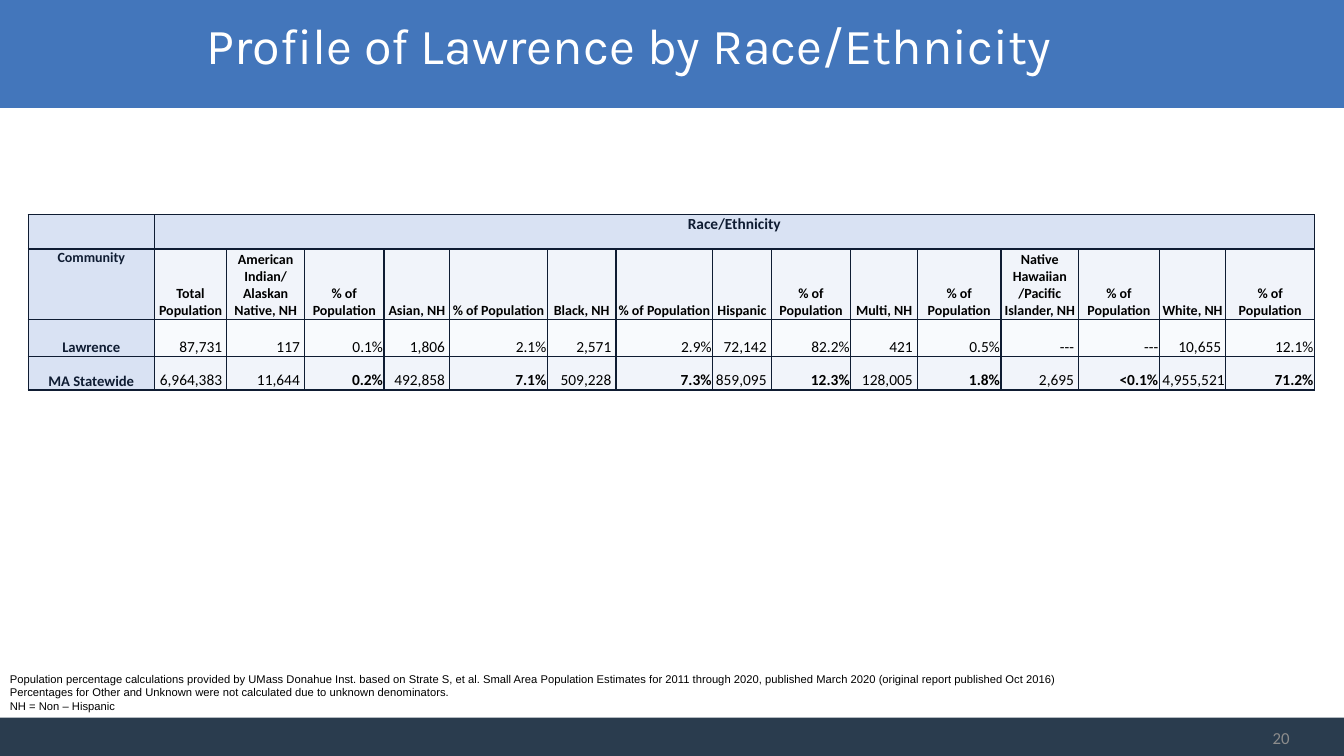
from dataclasses import dataclass

from lxml import etree
from pptx import Presentation
from pptx.dml.color import RGBColor
from pptx.enum.shapes import MSO_SHAPE
from pptx.enum.text import MSO_ANCHOR, PP_ALIGN
from pptx.oxml.ns import qn
from pptx.slide import Slide
from pptx.table import Table, _Cell
from pptx.text.text import TextFrame
from pptx.util import Emu, Pt

EMU_PER_PX = 9144
RECTANGLE = MSO_SHAPE.RECTANGLE
TOP, BOTTOM = MSO_ANCHOR.TOP, MSO_ANCHOR.BOTTOM
LEFT, CENTER, RIGHT = PP_ALIGN.LEFT, PP_ALIGN.CENTER, PP_ALIGN.RIGHT


@dataclass(frozen=True)
class Theme:
    banner: str = "4376BB"
    footer: str = "2A3C4E"
    page_number: str = "8C8C8C"
    white: str = "FFFFFF"
    black: str = "000000"
    navy: str = "0F1C32"
    label_fill: str = "D9E2F3"
    header_fill: str = "F1F4FA"
    light_fill: str = "F8FAFD"
    title_size: float = 36
    page_size: float = 12
    value_size: float = 11
    label_size: float = 10.5
    header_size: float = 10
    note_size: float = 8


THEME = Theme()


@dataclass(frozen=True)
class Box:
    left: int
    top: int
    width: int
    height: int

    def emu(self) -> tuple[Emu, Emu, Emu, Emu]:
        return px(self.left), px(self.top), px(self.width), px(self.height)


@dataclass(frozen=True)
class TextStyle:
    size: float
    color: str
    bold: bool = False
    align: PP_ALIGN = CENTER
    font: str = "Calibri"


@dataclass(frozen=True)
class CellStyle:
    text: TextStyle
    fill: str
    anchor: MSO_ANCHOR = BOTTOM
    side_margin: int = 1


@dataclass(frozen=True)
class Group:
    """A population group with its column widths and (count, share) per community."""
    name: str
    count_width: int
    share_width: int
    lawrence: tuple[str, str]
    statewide: tuple[str, str]


TABLE_BOX = Box(28, 213, 1276, 174)
ROW_HEIGHTS = (34, 70, 37, 33)
COMMUNITY_WIDTH, TOTAL_WIDTH = 125, 72
TOTALS = ("87,731", "6,964,383")
GROUPS = (
    Group("American Indian/ Alaskan Native, NH", 77, 79, ("117", "0.1%"), ("11,644", "0.2%")),
    Group("Asian, NH", 65, 97, ("1,806", "2.1%"), ("492,858", "7.1%")),
    Group("Black, NH", 68, 96, ("2,571", "2.9%"), ("509,228", "7.3%")),
    Group("Hispanic", 58, 79, ("72,142", "82.2%"), ("859,095", "12.3%")),
    Group("Multi, NH", 66, 83, ("421", "0.5%"), ("128,005", "1.8%")),
    Group("Native Hawaiian /Pacific Islander, NH", 77, 80, ("---", "---"), ("2,695", "<0.1%")),
    Group("White, NH", 66, 88, ("10,655", "12.1%"), ("4,955,521", "71.2%")),
)
NOTES = (
    "Population percentage calculations provided by UMass Donahue Inst. based on\u00a0Strate S, et al. "
    "Small Area Population Estimates for 2011 through 2020, published March 2020 "
    "(original report published Oct 2016)",
    "Percentages for Other and Unknown were not calculated due to unknown denominators.",
    "NH = Non – Hispanic",
)


def px(length: int) -> Emu:
    return Emu(length * EMU_PER_PX)


def write(text_frame: TextFrame, text: str, style: TextStyle) -> None:
    text_frame.text = text
    for paragraph in text_frame.paragraphs:
        paragraph.alignment = style.align
        for run in paragraph.runs:
            run.font.name = style.font
            run.font.size = Pt(style.size)
            run.font.bold = style.bold
            run.font.color.rgb = RGBColor.from_string(style.color)


def add_bar(slide: Slide, box: Box, color: str) -> None:
    bar = slide.shapes.add_shape(RECTANGLE, *box.emu())
    bar.shadow.inherit = False
    bar.fill.solid()
    bar.fill.fore_color.rgb = RGBColor.from_string(color)
    bar.line.fill.background()


def add_text(slide: Slide, box: Box, text: str, style: TextStyle, top_margin: int = 5) -> None:
    text_frame = slide.shapes.add_textbox(*box.emu()).text_frame
    text_frame.word_wrap = True
    text_frame.margin_top = px(top_margin)
    write(text_frame, text, style)


def add_borders(cell: _Cell) -> None:
    """Put the four edge lines ahead of the fill, as the schema orders them."""
    properties = cell._tc.get_or_add_tcPr()
    for position, edge in enumerate(("a:lnL", "a:lnR", "a:lnT", "a:lnB")):
        line = etree.Element(qn(edge), w=str(Pt(1)))
        fill = etree.SubElement(line, qn("a:solidFill"))
        etree.SubElement(fill, qn("a:srgbClr"), val=THEME.navy)
        properties.insert(position, line)


def fill_cell(cell: _Cell, text: str, style: CellStyle) -> None:
    cell.margin_left = cell.margin_right = px(style.side_margin)
    cell.margin_top = px(1 if style.side_margin == 1 else 0)
    cell.margin_bottom = 0
    cell.vertical_anchor = style.anchor
    cell.fill.solid()
    cell.fill.fore_color.rgb = RGBColor.from_string(style.fill)
    add_borders(cell)
    write(cell.text_frame, text, style.text)


def fill_community(table: Table, row: int, name: str, total: str,
                   values: list[tuple[str, str]], fill: str, bold_share: bool) -> None:
    label = CellStyle(TextStyle(THEME.label_size, THEME.navy, True), THEME.label_fill, side_margin=8)
    count_style = CellStyle(TextStyle(THEME.value_size, THEME.black, align=RIGHT), fill)
    share_style = CellStyle(TextStyle(THEME.value_size, THEME.black, bold_share, RIGHT), fill)
    fill_cell(table.cell(row, 0), name, label)
    fill_cell(table.cell(row, 1), f"{total} ", count_style)
    for index, (count, share) in enumerate(values):
        fill_cell(table.cell(row, 2 + 2 * index), f"{count} ", count_style)
        fill_cell(table.cell(row, 3 + 2 * index), share, share_style)


def add_population_table(slide: Slide) -> None:
    widths = [COMMUNITY_WIDTH, TOTAL_WIDTH]
    headers = ["Total Population"]
    for group in GROUPS:
        widths += [group.count_width, group.share_width]
        headers += [group.name, "% of Population"]

    table = slide.shapes.add_table(len(ROW_HEIGHTS), len(widths), *TABLE_BOX.emu()).table
    table.first_row = table.horz_banding = False
    for column, width in zip(table.columns, widths):
        column.width = px(width)
    for row, height in zip(table.rows, ROW_HEIGHTS):
        row.height = px(height)

    banner = CellStyle(TextStyle(THEME.value_size, THEME.navy, True), THEME.label_fill, TOP, 8)
    corner = CellStyle(TextStyle(THEME.header_size, THEME.navy, True), THEME.label_fill, TOP, 8)
    header = CellStyle(TextStyle(THEME.header_size, THEME.black, True), THEME.header_fill)
    for column in range(len(widths)):
        fill_cell(table.cell(0, column), "Race/Ethnicity" if column == 1 else "", banner)
    table.cell(0, 1).merge(table.cell(0, len(widths) - 1))
    fill_cell(table.cell(1, 0), "Community", corner)
    for column, text in enumerate(headers, start=1):
        fill_cell(table.cell(1, column), text, header)

    fill_community(table, 2, "Lawrence", TOTALS[0],
                   [group.lawrence for group in GROUPS], THEME.light_fill, False)
    fill_community(table, 3, "MA Statewide", TOTALS[1],
                   [group.statewide for group in GROUPS], THEME.header_fill, True)


def main() -> None:
    presentation = Presentation()
    presentation.slide_width, presentation.slide_height = px(1333), px(750)
    slide = presentation.slides.add_slide(presentation.slide_layouts[6])
    add_bar(slide, Box(0, 0, 1333, 107), THEME.banner)
    add_bar(slide, Box(0, 712, 1333, 38), THEME.footer)
    add_text(slide, Box(1222, 717, 67, 33), "20",
             TextStyle(THEME.page_size, THEME.page_number, align=RIGHT))
    add_text(slide, Box(0, 662, 1330, 67), "\n".join(NOTES),
             TextStyle(THEME.note_size, THEME.black, align=LEFT, font="Arial"))
    add_population_table(slide)
    add_text(slide, Box(-8, 4, 1264, 100), "Profile of Lawrence by Race/Ethnicity",
             TextStyle(THEME.title_size, THEME.white, font="Karla"), top_margin=10)
    presentation.save("out.pptx")


if __name__ == "__main__":
    main()
